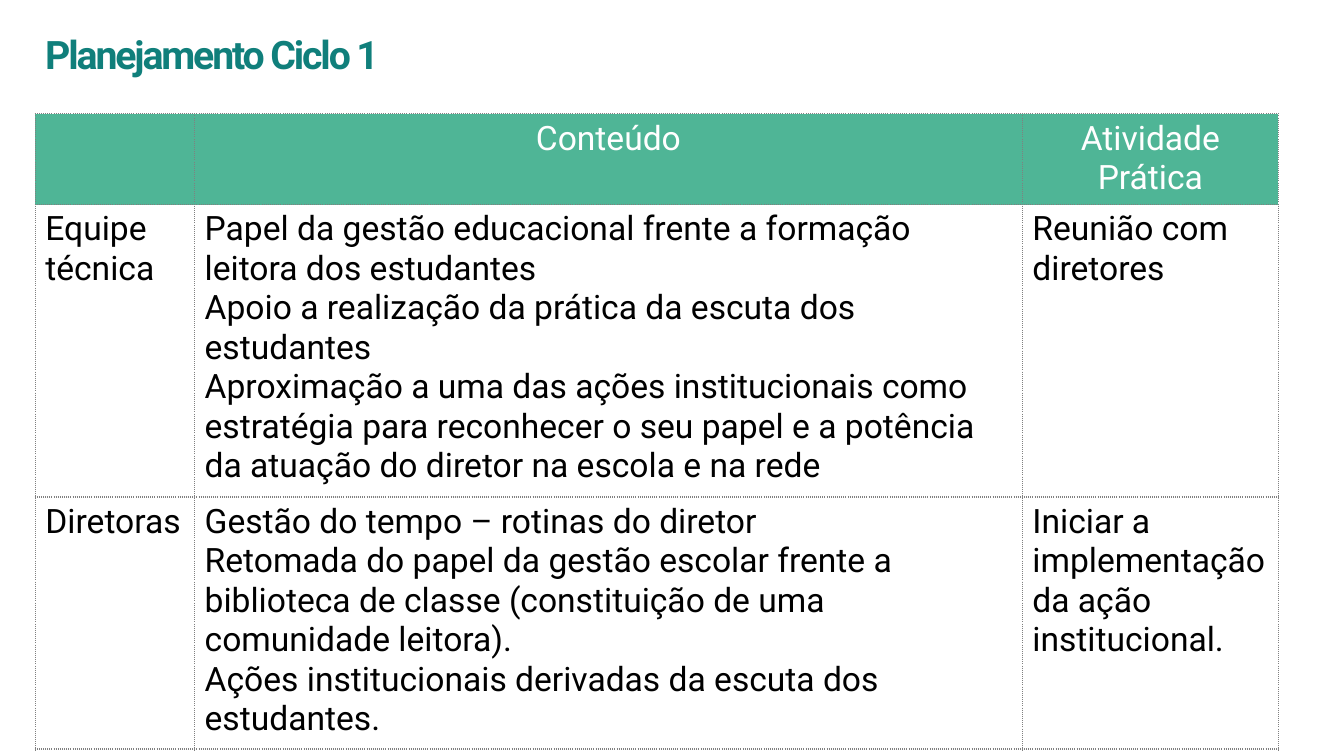
from dataclasses import dataclass

from pptx import Presentation
from pptx.dml.color import RGBColor as RGB
from pptx.enum.text import PP_ALIGN as Align
from pptx.oxml import parse_xml
from pptx.oxml.ns import nsdecls
from pptx.util import Inches, Pt


@dataclass(frozen=True)
class Theme:
    font: str = "Roboto"
    title_color: RGB = RGB(0x10, 0x7F, 0x7B)
    header_fill: RGB = RGB(0x4F, 0xB5, 0x96)
    header_text: RGB = RGB(0xFF, 0xFF, 0xFF)
    body_text: RGB = RGB(0, 0, 0)
    border: str = "808080"
    title_size: int = 28
    table_size: int = 24


THEME = Theme()
LEFT = 0.35
COLUMNS = [1.58, 8.21, 2.54]
ROWS = [0.89, 2.84, 2.45]

PLAN = [
    [[], ["Conteúdo"], ["Atividade Prática"]],
    [
        ["Equipe técnica"],
        [
            "Papel da gestão educacional frente a formação leitora dos estudantes",
            "Apoio a realização da prática da escuta dos estudantes",
            "Aproximação a uma das ações institucionais como estratégia para "
            "reconhecer o seu papel e a potência da atuação do diretor na escola e na rede",
        ],
        ["Reunião com diretores"],
    ],
    [
        ["Diretoras"],
        [
            "Gestão do tempo – rotinas do diretor",
            "Retomada do papel da gestão escolar frente a biblioteca de classe "
            "(constituição de uma comunidade leitora).",
            "Ações institucionais derivadas da escuta dos estudantes.",
        ],
        ["Iniciar a implementação da ação institucional."],
    ],
]


def write(tf, lines, size, color, align=Align.LEFT, bold=False):
    for i, line in enumerate(lines):
        p = tf.paragraphs[0] if i == 0 else tf.add_paragraph()
        p.add_run().text = line
        p.alignment = align
        p.font.name = THEME.font
        p.font.size = Pt(size)
        p.font.bold = bold
        p.font.color.rgb = color


def add_title(s, text, left, top, width, height):
    box = s.shapes.add_textbox(*map(Inches, (left, top, width, height)))
    tf = box.text_frame
    tf.word_wrap = True
    write(tf, [text], THEME.title_size, THEME.title_color, bold=True)
    tf.paragraphs[0].runs[0].font._element.set("spc", "-150")


def add_borders(cell):
    """Draw a dotted line on all four sides of the cell."""
    tcPr = cell._tc.get_or_add_tcPr()
    for i, side in enumerate("LRTB"):
        tcPr.insert(i, parse_xml(
            f'<a:ln{side} {nsdecls("a")} w="{Pt(1)}"><a:solidFill>'
            f'<a:srgbClr val="{THEME.border}"/></a:solidFill>'
            f'<a:prstDash val="sysDot"/></a:ln{side}>'))


def add_plan(s, left, top, columns, rows):
    box = map(Inches, (left, top, sum(columns), sum(rows)))
    table = s.shapes.add_table(len(rows), len(columns), *box).table
    table.horz_banding = False
    table.first_row = False
    for column, width in zip(table.columns, columns):
        column.width = Inches(width)
    for r, height in enumerate(rows):
        table.rows[r].height = Inches(height)
        for c, lines in enumerate(PLAN[r]):
            cell = table.cell(r, c)
            if r == 0:
                cell.fill.solid()
                cell.fill.fore_color.rgb = THEME.header_fill
                color, align = THEME.header_text, Align.CENTER
            else:
                cell.fill.background()
                color, align = THEME.body_text, Align.LEFT
            write(cell.text_frame, lines, THEME.table_size, color, align)
            add_borders(cell)


def main():
    prs = Presentation()
    prs.slide_width, prs.slide_height = Inches(13.33), Inches(7.5)
    s = prs.slides.add_slide(prs.slide_layouts[6])
    add_title(s, "Planejamento Ciclo 1", LEFT, 0.25, 12.23, 1.25)
    add_plan(s, LEFT, 1.13, COLUMNS, ROWS)
    prs.save("out.pptx")


if __name__ == "__main__":
    main()
